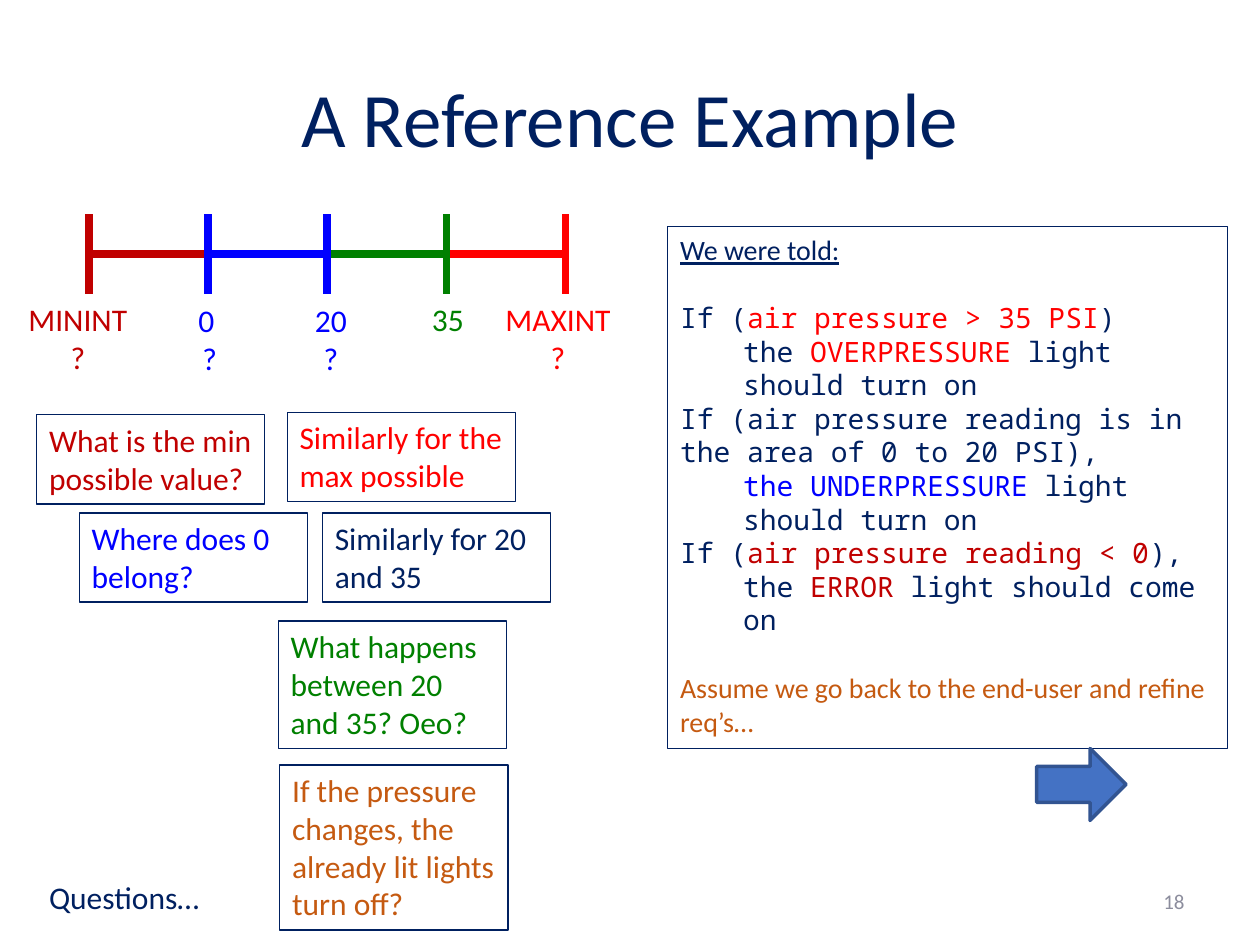
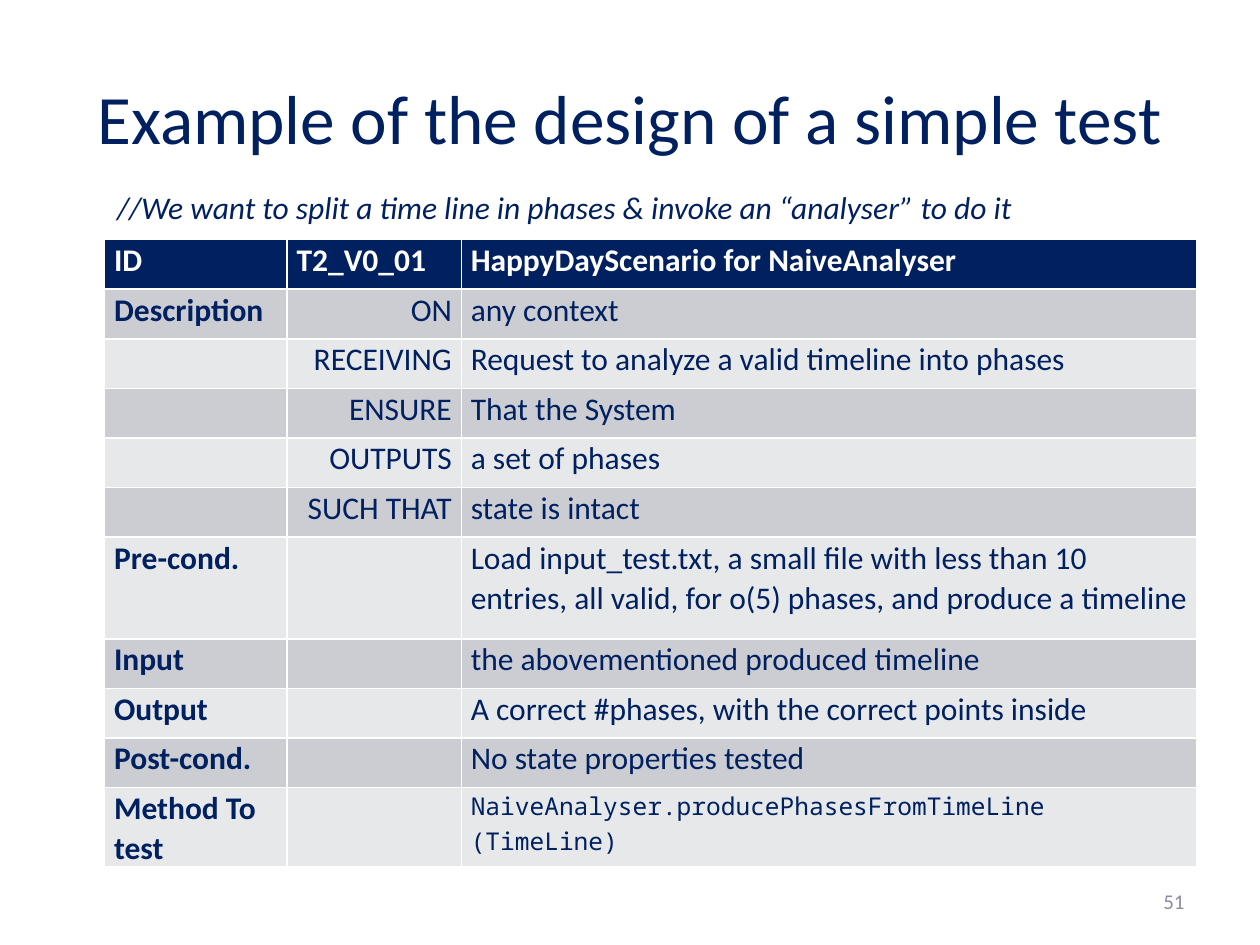
from dataclasses import dataclass
from lxml.etree import SubElement
from pptx import Presentation
from pptx.dml.color import RGBColor as Rgb
from pptx.enum.shapes import MSO_CONNECTOR as Link, MSO_SHAPE as Form
from pptx.enum.text import MSO_ANCHOR as Anchor, MSO_AUTO_SIZE as Fit, PP_ALIGN as Align
from pptx.oxml.ns import qn
from pptx.util import Cm, Pt


@dataclass(frozen=True)
class Theme:
    navy: str = "002060"
    red: str = "FF0000"
    dark: str = "C00000"
    blue: str = "0000FF"
    green: str = "008000"
    rust: str = "C55A11"
    grey: str = "8C8D9D"
    white: str = "FFFFFF"
    arrow: str = "4472C4"
    edge: str = "325491"
    bands: tuple = ("E7E8EA", "CCCDD2")
    sans: str = "Calibri"
    mono: str = "Noto Sans Mono"
    head: float = 44
    tight: float = 39.6
    body: float = 18
    told: float = 16
    code: float = 14
    page: float = 12


T = Theme()

SPANS = [(3, T.red), (2, T.green), (0, T.dark), (1, T.blue)]
MARKS = [
    (0.2, 5.92, 2.74, ["MININT?"], T.dark),
    (3.05, 5.94, 2.36, ["0 ", "?"], T.blue),
    (5.49, 5.94, 2.36, ["20", "?"], T.blue),
    (7.85, 5.92, 2.36, ["35"], T.green),
    (9.9, 5.92, 2.7, ["MAXINT?"], T.red),
]
NOTES = [
    (0.74, 8.36, 1.8, "What is the min possible value?", T.dark),
    (1.6, 10.34, 1.8, "Where does 0 belong?", T.blue),
    (6.5, 10.34, 1.8, "Similarly for 20 and 35", T.navy),
    (5.79, 8.31, 1.8, "Similarly for the max possible", T.red),
    (5.61, 12.52, 2.57, "What happens between 20 and 35? Oeo?", T.green),
    (5.64, 15.42, 3.33, "If the pressure changes, the already lit lights turn off?", T.rust),
]
INTRO = "We were told:"
RULES = [
    (0, [("If (", T.navy), ("air pressure > 35 PSI", T.red), (")", T.navy)]),
    (1, [("the ", T.navy), ("OVERPRESSURE", T.red), (" light should turn on", T.navy)]),
    (0, [("If (air pressure reading is in the area of 0 to 20 PSI),", T.navy)]),
    (1, [("the UNDERPRESSURE ", T.blue), ("light should turn on", T.navy)]),
    (0, [("If (", T.navy), ("air pressure reading < 0", T.dark), ("),", T.navy)]),
    (1, [("the ", T.navy), ("ERROR", T.dark), (" light should come on", T.navy)]),
]
CLOSE = "Assume we go back to the end-user and refine req’s…"

LEAD = "//We want to split a time line in phases & invoke an “analyser” to do it"
WIDTHS = [3.68, 3.51, 14.83]
ROWS = [
    ("ID", "T2_V0_01", "HappyDayScenario for NaiveAnalyser"),
    ("Description", "ON", "any context"),
    ("", "RECEIVING", "Request to analyze a valid timeline into phases"),
    ("", "ENSURE", "That the System"),
    ("", "OUTPUTS", "a set of phases"),
    ("", "SUCH THAT", "state is intact"),
    ("Pre-cond.", "", "Load input_test.txt, a small file with less than 10 entries, "
     "all valid, for o(5) phases, and produce a timeline"),
    ("Input", "", "the abovementioned produced timeline"),
    ("Output", "", "A correct #phases, with the correct points inside"),
    ("Post-cond.", "", "No state properties tested"),
    ("Method To test", "", "NaiveAnalyser.producePhasesFromTimeLine (TimeLine)"),
]
TALL = 6


def ink(run, color, size=T.body, face=T.sans):
    run.font.name, run.font.size = face, Pt(size)
    run.font.color.rgb = Rgb.from_string(color)


def fill(item, color):
    item.fill.solid()
    item.fill.fore_color.rgb = Rgb.from_string(color)


def trim(line, color, width):
    line.color.rgb = Rgb.from_string(color)
    line.width = Pt(width)


def write(frame, lines, color, size=T.body, align=Align.LEFT, face=T.sans):
    frame.text = "\n".join(lines)
    for para in frame.paragraphs:
        para.alignment = align
        for run in para.runs:
            ink(run, color, size, face)


def label(slide, box, lines, color, size=T.body, align=Align.LEFT):
    frame = slide.shapes.add_textbox(*map(Cm, box)).text_frame
    frame.word_wrap = True
    write(frame, lines, color, size, align)
    return frame


def panel(slide, box):
    shape = slide.shapes.add_shape(Form.RECTANGLE, *map(Cm, box))
    shape.shadow.inherit = False
    shape.fill.background()
    trim(shape.line, T.navy, 0.75)
    frame = shape.text_frame
    frame.word_wrap = True
    frame.vertical_anchor = Anchor.TOP
    return frame


def start(deck, title, size, page):
    slide = deck.slides.add_slide(deck.slide_layouts[5])
    head = slide.shapes.title
    head.left, head.top, head.width, head.height = map(Cm, (1.27, 0.76, 22.86, 3.18))
    frame = head.text_frame
    frame.auto_size, frame.vertical_anchor = Fit.NONE, Anchor.MIDDLE
    write(frame, [title], T.navy, size, Align.CENTER)
    foot = label(slide, (18.21, 17.65, 5.92, 1.02), [page], T.grey, T.page, Align.RIGHT)
    foot.vertical_anchor = Anchor.MIDDLE
    return slide


def draw_scale(slide):
    left, step, top, base = 1.8, 2.4, 4.32, 5.92
    mid = (top + base) / 2
    for place, color in SPANS:
        near = left + place * step
        far = near + step
        group = slide.shapes.add_group_shape().shapes
        for ends in ((near, top, near, base), (far, top, far, base), (near, mid, far, mid)):
            line = group.add_connector(Link.STRAIGHT, *map(Cm, ends))
            trim(line.line, color, 4.5)
            SubElement(line._element.spPr, qn("a:effectLst"))


def draw_rules(slide):
    frame = panel(slide, (13.46, 4.57, 11.28, 10.52))
    write(frame, [INTRO], T.navy, T.told)
    frame.paragraphs[0].runs[0].font.underline = True
    gap = Pt(19.5)
    for order, (level, parts) in enumerate(RULES):
        para = frame.add_paragraph()
        para.alignment, para.level = Align.LEFT, level
        para._p.get_or_add_pPr().set("marL", str(Cm(1.27 * level)))
        if order == 0:
            para.space_before = gap
        for text, color in parts:
            run = para.add_run()
            run.text = text
            ink(run, color, T.told, T.mono)
    last = frame.add_paragraph()
    last.text, last.alignment, last.space_before = CLOSE, Align.LEFT, gap
    ink(last.runs[0], T.rust, T.told)


def draw_table(slide):
    box = (2.11, 4.83, sum(WIDTHS), len(ROWS) + 1)
    table = slide.shapes.add_table(len(ROWS), len(WIDTHS), *map(Cm, box)).table
    for col, width in zip(table.columns, WIDTHS):
        col.width = Cm(width)
    for r, texts in enumerate(ROWS):
        table.rows[r].height = Cm(2.05 if r == TALL else 1)
        for c, text in enumerate(texts):
            cell = table.cell(r, c)
            fill(cell, T.bands[r % 2] if r else T.navy)
            cell.margin_left = cell.margin_right = Cm(0.19)
            cell.margin_top = cell.margin_bottom = 0
            code = r == len(ROWS) - 1 and c == 2
            write(cell.text_frame, [text], T.navy if r else T.white,
                  T.code if code else T.body,
                  Align.RIGHT if r and c == 1 else Align.LEFT,
                  T.mono if code else T.sans)
            para = cell.text_frame.paragraphs[0]
            para.line_spacing = 1.05
            for run in para.runs:
                run.font.bold = r == 0 or c == 0


def main():
    deck = Presentation()
    deck.slide_width, deck.slide_height = Cm(25.4), Cm(19.05)

    slide = start(deck, "A Reference Example", T.head, "18")
    draw_scale(slide)
    draw_rules(slide)
    for left, top, width, lines, color in MARKS:
        label(slide, (left, top, width, 1.8), lines, color, align=Align.CENTER)
    label(slide, (0.74, 17.58, 4.6, 1.02), ["Questions…"], T.navy)
    for left, top, height, text, color in NOTES:
        write(panel(slide, (left, top, 4.6, height)), [text], color)
    arrow = slide.shapes.add_shape(Form.RIGHT_ARROW, *map(Cm, (20.9, 15.09, 1.8, 1.45)))
    arrow.shadow.inherit = False
    fill(arrow, T.arrow)
    trim(arrow.line, T.edge, 2)

    slide = start(deck, "Example of the design of a simple test", T.tight, "51")
    lead = label(slide, (2.11, 3.66, 21.21, 1.02), [LEAD], T.navy)
    lead.paragraphs[0].runs[0].font.italic = True
    draw_table(slide)

    deck.save("out.pptx")


if __name__ == "__main__":
    main()
